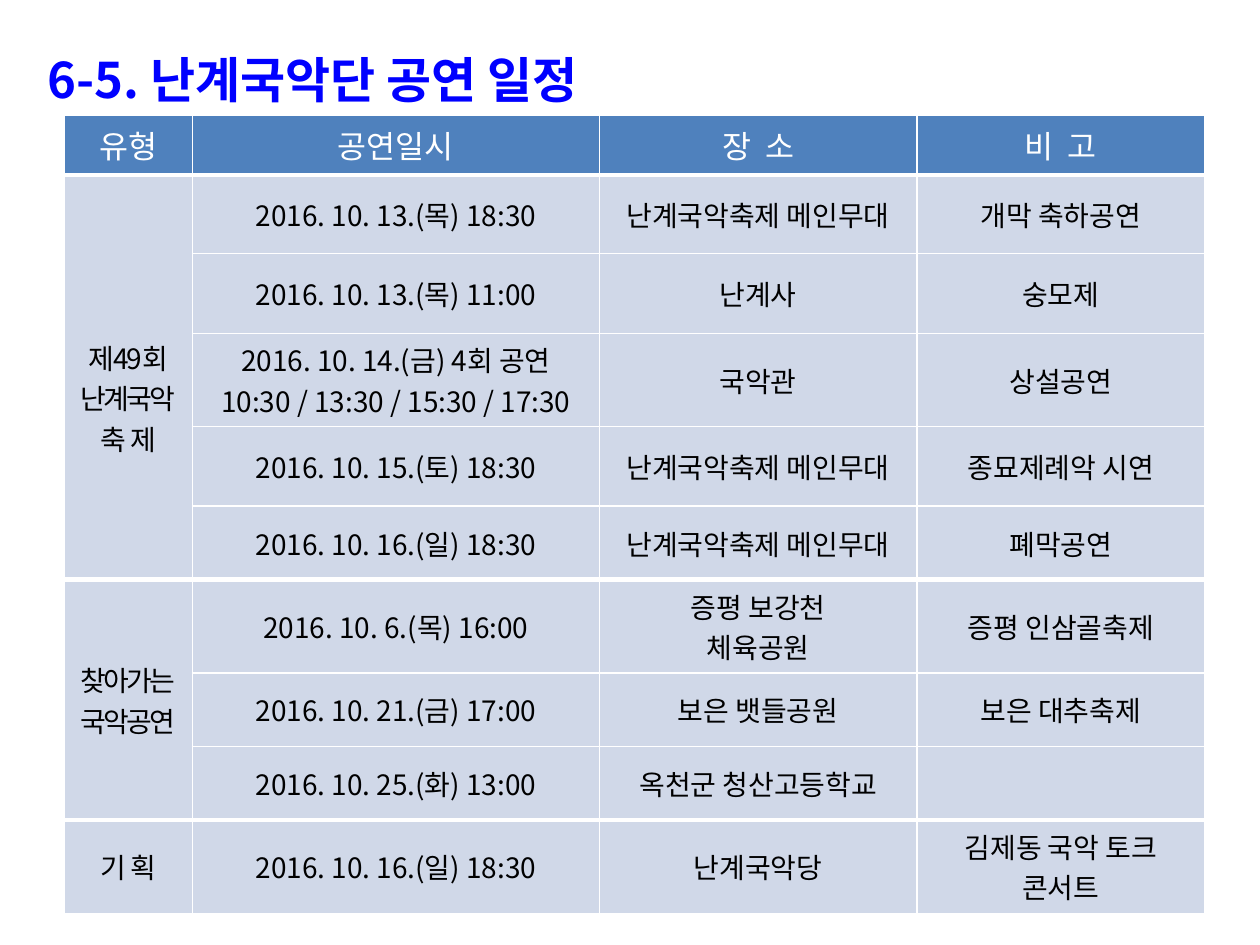
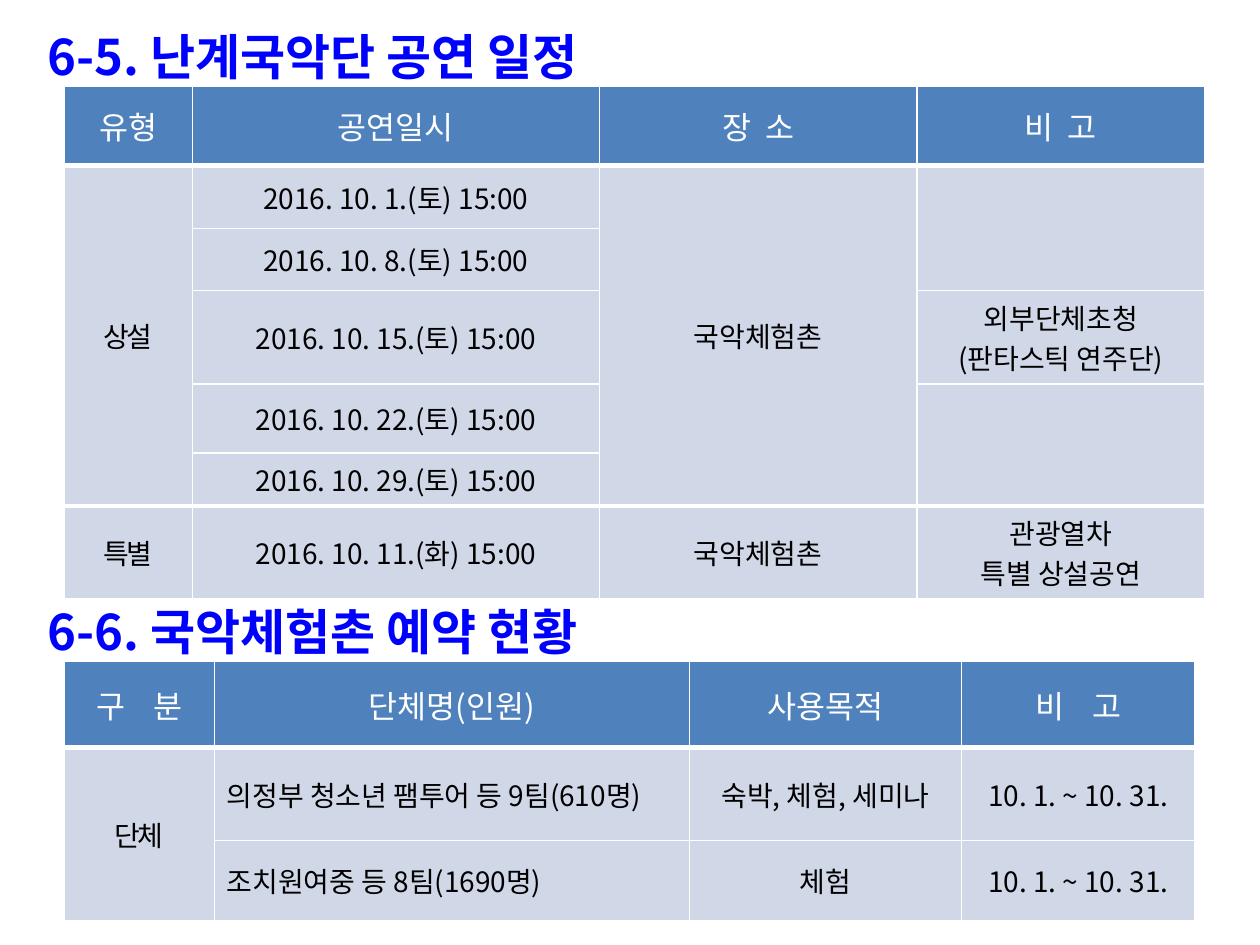
from lxml.etree import SubElement
from pptx import Presentation
from pptx.dml.color import RGBColor
from pptx.enum.text import MSO_ANCHOR, MSO_AUTO_SIZE, PP_ALIGN
from pptx.oxml.ns import qn
from pptx.util import Pt

FONT = "Noto Sans CJK KR"
BLUE = RGBColor(0x00, 0x00, 0xFF)
STEEL = RGBColor(0x4F, 0x81, 0xBD)
PALE = RGBColor(0xD0, 0xD8, 0xE8)
WHITE = RGBColor(0xFF, 0xFF, 0xFF)
BLACK = RGBColor(0x00, 0x00, 0x00)
LEFT = 36.5
COLS = [73.5, 232.5, 181.5, 164.5]
HEADS = ["유형", "공연일시", "장 소", "비 고"]


def write(frame, text, size=16, color=BLACK, bold=False, align=PP_ALIGN.CENTER, track=0):
    """Fill a text frame, one paragraph a line; track is the letter spacing in points."""
    for i, line in enumerate(text.split("\n")):
        para = frame.paragraphs[0] if i == 0 else frame.add_paragraph()
        para.alignment = align
        run = para.add_run()
        run.text = line
        font = run.font
        font.name, font.size, font.bold = FONT, Pt(size), bold
        font.color.rgb = color
        props = font._element
        SubElement(props, qn("a:ea")).set("typeface", FONT)
        # Spaced-out labels are tightened less than solid ones
        gap = -0.5 if track < 0 and " " in line else track
        props.set("spc", str(round(gap * 100)))


def grid(slide, top, cols, highs, rows, spans, heavy, spread=2, lefts=()):
    """Draw a table; spans maps (row, col) to rows merged, heavy maps rows to bottom line widths."""
    frame = slide.shapes.add_table(len(rows), len(cols), Pt(LEFT), Pt(top),
                                   Pt(sum(cols)), Pt(sum(highs)))
    table = frame.table
    table.horz_banding = False
    for col, wide in zip(table.columns, cols):
        col.width = Pt(wide)
    for row, high in zip(table.rows, highs):
        row.height = Pt(high)
    for (r, c), count in spans.items():
        table.cell(r, c).merge(table.cell(r + count - 1, c))
    for r, row in enumerate(rows):
        for c, text in enumerate(row):
            cell = table.cell(r, c)
            cell.vertical_anchor = MSO_ANCHOR.MIDDLE
            head = r == 0
            if head:
                track = spread if " " in text else 0
            else:
                track = -1.5 if c == 0 else 0
            write(cell.text_frame, text, size=18 if head else 16,
                  color=WHITE if head else BLACK, track=track,
                  align=PP_ALIGN.LEFT if c in lefts and not head else PP_ALIGN.CENTER)
            last = r + spans.get((r, c), 1) - 1
            sides = {"L": 1, "R": 1, "T": heavy.get(r - 1, 1), "B": heavy.get(last, 1)}
            for side, wide in sides.items():
                line = SubElement(cell._tc.get_or_add_tcPr(), qn("a:ln" + side))
                line.set("w", str(Pt(wide)))
                fill = SubElement(line, qn("a:solidFill"))
                SubElement(fill, qn("a:srgbClr")).set("val", str(WHITE))
            cell.fill.solid()
            cell.fill.fore_color.rgb = STEEL if head else PALE
    return table


deck = Presentation()
deck.slide_width, deck.slide_height = Pt(720), Pt(540)
fest, stage = [deck.slides.add_slide(deck.slide_layouts[5]) for _ in range(2)]

# Headings
more = stage.shapes.add_textbox(0, 0, 0, 0)
heads = [
    (fest.shapes.title, "6-5. 난계국악단 공연 일정", 11.5, 692, 202),
    (stage.shapes.title, "6-5. 난계국악단 공연 일정", -2, 692, 202),
    (more, "6-6. 국악체험촌 예약 현황", 327, 697, 164),
]
for box, text, top, wide, high in heads:
    box.left, box.top, box.width, box.height = Pt(20), Pt(top), Pt(wide), Pt(high)
    frame = box.text_frame
    frame.word_wrap = False
    frame.auto_size = MSO_AUTO_SIZE.NONE
    frame.vertical_anchor = MSO_ANCHOR.TOP
    write(frame, text, size=28, color=BLUE, bold=True, align=PP_ALIGN.LEFT)
    para = frame.paragraphs[0]
    para.line_spacing = 1.4
    props = para._p.get_or_add_pPr()
    props.set("marL", str(Pt(42)))
    props.set("indent", str(Pt(-42)))

# Festival, touring and special shows
shows = [
    HEADS,
    ["제49회\n난계국악\n축 제", "2016. 10. 13.(목) 18:30", "난계국악축제 메인무대", "개막 축하공연"],
    ["", "2016. 10. 13.(목) 11:00", "난계사", "숭모제"],
    ["", "2016. 10. 14.(금) 4회 공연\n10:30 / 13:30 / 15:30 / 17:30", "국악관", "상설공연"],
    ["", "2016. 10. 15.(토) 18:30", "난계국악축제 메인무대", "종묘제례악 시연"],
    ["", "2016. 10. 16.(일) 18:30", "난계국악축제 메인무대", "폐막공연"],
    ["찾아가는\n국악공연", "2016. 10. 6.(목) 16:00", "증평 보강천\n체육공원", "증평 인삼골축제"],
    ["", "2016. 10. 21.(금) 17:00", "보은 뱃들공원", "보은 대추축제"],
    ["", "2016. 10. 25.(화) 13:00", "옥천군 청산고등학교", ""],
    ["기 획", "2016. 10. 16.(일) 18:30", "난계국악당", "김제동 국악 토크\n콘서트"],
]
table = grid(fest, 66, COLS, [34, 45, 45.5, 53, 45.5, 42, 53, 42, 42, 53], shows,
             spans={(1, 0): 5, (6, 0): 3}, heavy={0: 3, 5: 3, 8: 3})
table.cell(1, 0).margin_top = Pt(27)

# Regular shows
weeks = [
    HEADS,
    ["상설", "2016. 10. 1.(토) 15:00", "국악체험촌", ""],
    ["", "2016. 10. 8.(토) 15:00", "", ""],
    ["", "2016. 10. 15.(토) 15:00", "", "외부단체초청\n(판타스틱 연주단)"],
    ["", "2016. 10. 22.(토) 15:00", "", ""],
    ["", "2016. 10. 29.(토) 15:00", "", ""],
    ["특별", "2016. 10. 11.(화) 15:00", "국악체험촌", "관광열차\n특별 상설공연"],
]
grid(stage, 49, COLS, [45.5, 36, 35.5, 53, 39.5, 30, 53], weeks,
     spans={(1, 0): 5, (1, 2): 5, (1, 3): 2, (4, 3): 2}, heavy={0: 3, 5: 2.25})

# Bookings
books = [
    ["구 분", "단체명(인원)", "사용목적", "비 고"],
    ["단체", "의정부 청소년 팸투어 등 9팀(610명)", "숙박, 체험, 세미나", "10. 1. ~ 10. 31."],
    ["", "조치원여중 등 8팀(1690명)", "체험", "10. 1. ~ 10. 31."],
]
grid(stage, 378, [86, 271.5, 155.5, 133.5], [49, 53, 46], books,
     spans={(1, 0): 2}, heavy={0: 3}, spread=6, lefts=(1,))

deck.save("out.pptx")
